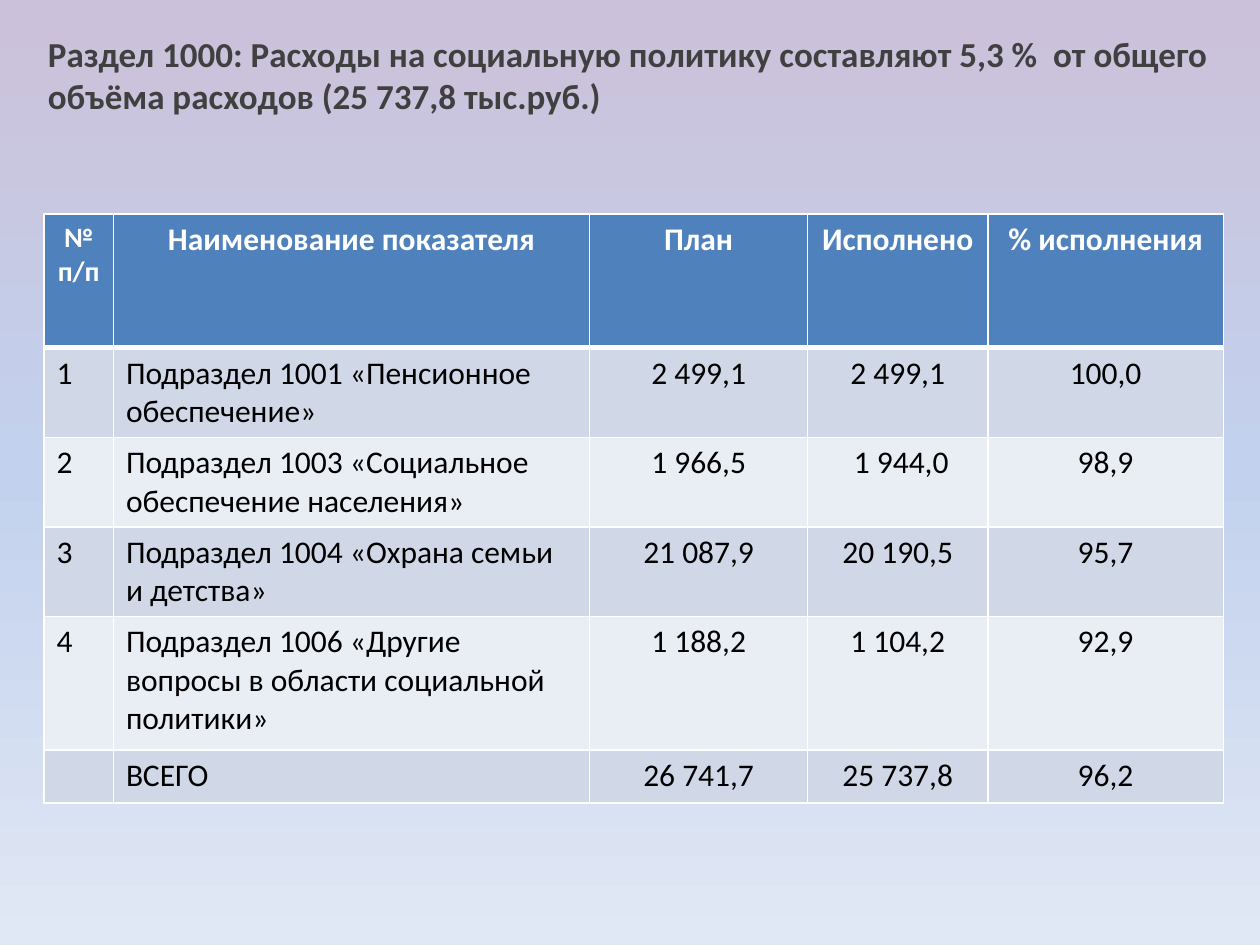
from copy import deepcopy
from typing import NamedTuple

from lxml import etree
from pptx import Presentation
from pptx.dml.color import RGBColor
from pptx.enum.text import MSO_ANCHOR, MSO_AUTO_SIZE, PP_ALIGN
from pptx.oxml.ns import qn
from pptx.util import Inches, Pt

LEFT, CENTER = PP_ALIGN.LEFT, PP_ALIGN.CENTER
TOP = MSO_ANCHOR.TOP
FIXED = MSO_AUTO_SIZE.NONE
TITLE_ONLY = 5

FONT = "Calibri"
WHITE, BLACK, GRAY = "FFFFFF", "000000", "404040"
HEAD = "4F81BD"
BANDS = ("D0D8E8", "E9EDF4")
SKY = ((0, "CCC1DA"), (0.5, "C2D1ED"), (1, "E1E8F5"))

TITLE = ("Раздел 1000: Расходы на социальную политику составляют 5,3 %  "
         "от общего объёма расходов (25 737,8 тыс.руб.)")


class Column(NamedTuple):
    head: str
    width: float
    align: PP_ALIGN = CENTER
    size: int = 18


class Row(NamedTuple):
    height: float
    cells: tuple[str, ...]


COLUMNS = (
    Column("№ п/п", 0.55, LEFT, 16),
    Column("Наименование показателя", 3.78, LEFT),
    Column("План", 1.73),
    Column("Исполнено", 1.43),
    Column("% исполнения", 1.87),
)
HEAD_HEIGHT = 1.06
ROWS = (
    Row(0.67, ("1", "Подраздел 1001 «Пенсионное обеспечение»",
               "2 499,1", "2 499,1", "100,0")),
    Row(0.68, ("2", "Подраздел 1003 «Социальное обеспечение населения»",
               "1 966,5", " 1 944,0", "98,9")),
    Row(0.61, ("3", "Подраздел 1004 «Охрана семьи и детства»",
               "21 087,9", "20 190,5", "95,7")),
    Row(1.06, ("4", "Подраздел 1006 «Другие вопросы в области социальной политики»",
               "1 188,2", "1 104,2", "92,9")),
    Row(0.42, ("", "ВСЕГО", "26 741,7", "25 737,8", "96,2")),
)


def color(code: str) -> RGBColor:
    return RGBColor.from_string(code)


def write(frame, text: str, *, size: int = 18, ink: str = BLACK,
          bold: bool = False, align: PP_ALIGN = LEFT) -> None:
    frame.text = text
    line = frame.paragraphs[0]
    line.alignment = align
    for font in [line.font] + [run.font for run in line.runs]:
        font.name, font.size, font.bold = FONT, Pt(size), bold
        font.color.rgb = color(ink)


def paint_sky(slide) -> None:
    fill = slide.background.fill
    fill.gradient()
    fill.gradient_angle = 270
    stops = slide.element.find(".//" + qn("a:gsLst"))
    while len(stops) < len(SKY):
        stops.append(deepcopy(stops[0]))
    for stop, (place, code) in zip(fill.gradient_stops, SKY):
        stop.position = place
        stop.color.rgb = color(code)


def dress(cell, fill: str, base: int = 1) -> None:
    """Fill a cell and edge it in white; base is the bottom line in points."""
    props = cell._tc.get_or_add_tcPr()
    for side, width in zip("LRTB", (1, 1, 1, base)):
        edge = etree.SubElement(props, qn(f"a:ln{side}"), w=str(Pt(width)))
        solid = etree.SubElement(edge, qn("a:solidFill"))
        etree.SubElement(solid, qn("a:srgbClr"), val=WHITE)
    cell.fill.solid()
    cell.fill.fore_color.rgb = color(fill)


def add_title(slide) -> None:
    title = slide.shapes.title
    title.left, title.top = Inches(0.28), Inches(0.21)
    title.width, title.height = Inches(9.45), Inches(0.55)
    frame = title.text_frame
    frame.word_wrap, frame.auto_size = True, FIXED
    frame.vertical_anchor = TOP
    write(frame, TITLE, size=20, ink=GRAY, bold=True)


def add_budget(slide) -> None:
    heights = [HEAD_HEIGHT] + [row.height for row in ROWS]
    width = sum(col.width for col in COLUMNS)
    table = slide.shapes.add_table(
        len(heights), len(COLUMNS), Inches(0.35), Inches(1.7),
        Inches(width), Inches(sum(heights))).table
    for row, height in zip(table.rows, heights):
        row.height = Inches(height)
    for x, col in enumerate(COLUMNS):
        table.columns[x].width = Inches(col.width)
        cell = table.cell(0, x)
        dress(cell, HEAD, base=3)
        write(cell.text_frame, col.head, size=col.size, ink=WHITE,
              bold=True, align=CENTER)
        for y, row in enumerate(ROWS):
            cell = table.cell(y + 1, x)
            dress(cell, BANDS[y % 2])
            write(cell.text_frame, row.cells[x], align=col.align)


def main() -> None:
    deck = Presentation()
    deck.slide_width, deck.slide_height = Inches(10), Inches(7.5)
    slide = deck.slides.add_slide(deck.slide_layouts[TITLE_ONLY])
    paint_sky(slide)
    add_title(slide)
    add_budget(slide)
    deck.save("out.pptx")


if __name__ == "__main__":
    main()
